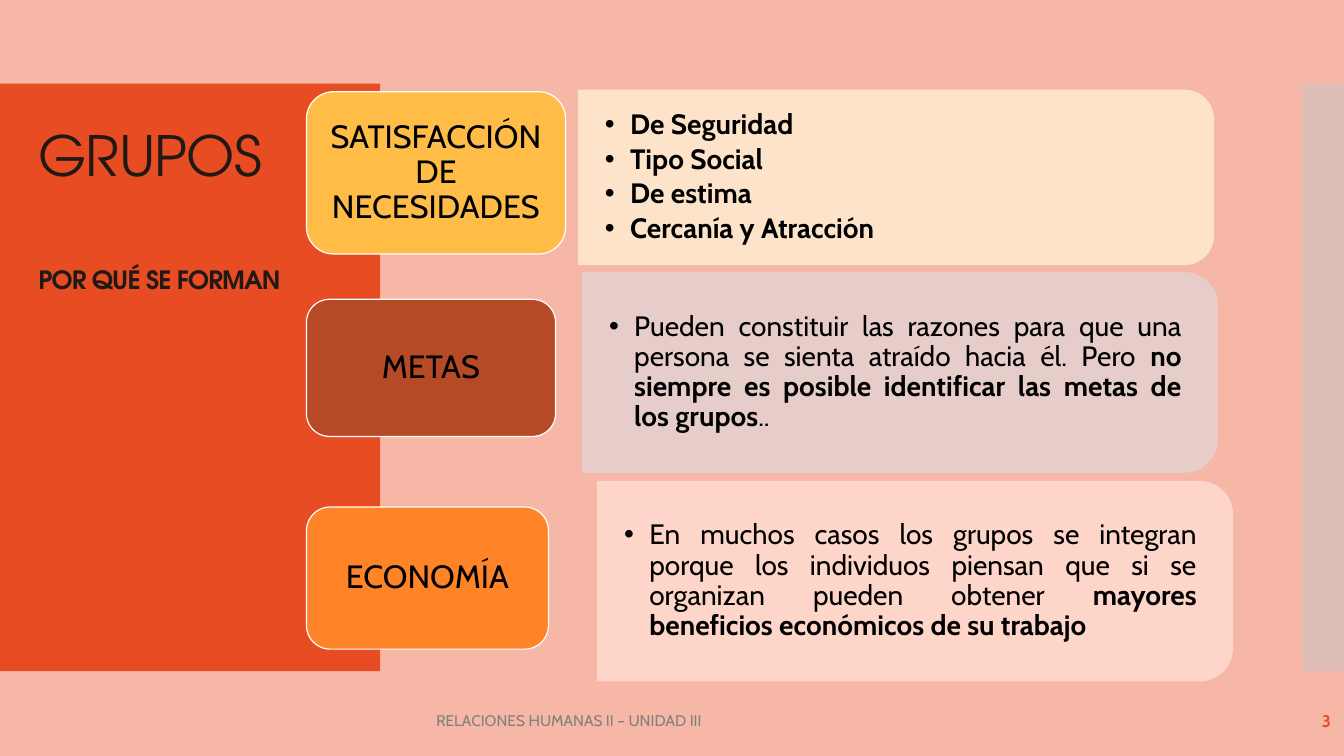
from lxml import etree
from pptx import Presentation
from pptx.dml.color import RGBColor
from pptx.enum.shapes import MSO_SHAPE
from pptx.enum.text import MSO_ANCHOR, MSO_AUTO_SIZE, PP_ALIGN
from pptx.oxml.ns import qn
from pptx.util import Inches, Pt

RECT = MSO_SHAPE.RECTANGLE
ROUNDED = MSO_SHAPE.ROUNDED_RECTANGLE
ROUND_TOP = MSO_SHAPE.ROUND_2_SAME_RECTANGLE
TOP, MIDDLE = MSO_ANCHOR.TOP, MSO_ANCHOR.MIDDLE
LEFT, CENTER, RIGHT, JUSTIFY = PP_ALIGN.LEFT, PP_ALIGN.CENTER, PP_ALIGN.RIGHT, PP_ALIGN.JUSTIFY
BODY_FONT, TITLE_FONT = "Cabin", "TeX Gyre Adventor"
COLORS = {
    "background": "F6B7A7", "accent": "E84C22", "side": "C8C8C8",
    "title": "211915", "footer": "808080", "black": "000000", "white": "FFFFFF",
}
PANEL_WIDTH, LIST_WIDTH, LABEL_LEFT = 6.31, 6.22, 3.04

# Label, its colour, top, width and height; panel colour, left, top and height;
# list items, each made of (text, bold) pieces
REASONS = [
    ("SATISFACCIÓN DE NECESIDADES", "FFBD47", (0.91, 2.57, 1.61),
     "FFE8CF", (5.73, 0.89, 1.74),
     [[("De Seguridad", True)], [("Tipo Social", True)],
      [("De estima", True)], [("Cercanía y Atracción", True)]]),
    ("METAS", "B64926", (2.97, 2.47, 1.36),
     "E5D0CD", (5.77, 2.7, 1.99),
     [[("Pueden constituir las razones para que una persona se sienta atraído hacia él. Pero ", False),
       ("no siempre es posible identificar las metas de los grupos", True), ("..", False)]]),
    ("ECONOMÍA", "FF8427", (5.03, 2.4, 1.41),
     "FFD9CD", (5.92, 4.77, 1.99),
     [[("En muchos casos los grupos se integran porque los individuos piensan que si se "
        "organizan pueden obtener ", False),
       ("mayores beneficios económicos de su trabajo", True)]]),
]


def add_block(kind, left, top, width, height, color, opacity=100, outline=None):
    """Add a filled shape; opacity is a percentage."""
    block = slide.shapes.add_shape(kind, Inches(left), Inches(top), Inches(width), Inches(height))
    block.shadow.inherit = False
    block.fill.solid()
    block.fill.fore_color.rgb = RGBColor.from_string(color)
    if opacity < 100:
        tint = block.fill._xPr.find(qn("a:solidFill"))[0]
        etree.SubElement(tint, qn("a:alpha")).set("val", str(opacity * 1000))
    if outline:
        block.line.color.rgb = RGBColor.from_string(outline)
        block.line.width = Pt(0.85)
    else:
        block.line.fill.background()
    return block


def write(frame, paragraphs, size, color, font=BODY_FONT, align=LEFT, anchor=MIDDLE, spacing=0.9):
    """Fill a text frame with paragraphs, each a list of (text, bold) pieces."""
    frame.word_wrap = True
    frame.auto_size = MSO_AUTO_SIZE.NONE
    frame.vertical_anchor = anchor
    for index, pieces in enumerate(paragraphs):
        paragraph = frame.add_paragraph() if index else frame.paragraphs[0]
        layout = {"alignment": align, "line_spacing": spacing, "space_before": Pt(0)}
        for name, value in layout.items():
            setattr(paragraph, name, value)
        for text, bold in pieces:
            run = paragraph.add_run()
            run.text = text
            for name, value in {"name": font, "size": Pt(size), "bold": bold}.items():
                setattr(run.font, name, value)
            run.font.color.rgb = RGBColor.from_string(color)


prs = Presentation()
prs.slide_width, prs.slide_height = Inches(13.33), Inches(7.5)
slide = prs.slides.add_slide(prs.slide_layouts.get_by_name("Comparison"))
slide.background.fill.solid()
slide.background.fill.fore_color.rgb = RGBColor.from_string(COLORS["background"])
title, *reason_lists, spare = slide.placeholders
spare.element.getparent().remove(spare.element)
layers = slide.shapes._spTree

# Side bars and title
add_block(RECT, 0, 0.83, 3.77, 5.83, COLORS["accent"])
add_block(RECT, 12.92, 0.83, 0.41, 5.83, COLORS["side"], opacity=50)
layers.append(title.element)
title.left, title.top, title.width, title.height = map(Inches, (0.28, 1.23, 3.22, 1.57))
write(title.text_frame, [[("GRUPOS", False)], [("POR QUÉ SE FORMAN", True)]],
      39.6, COLORS["title"], TITLE_FONT, anchor=TOP)
heading, subtitle = title.text_frame.paragraphs
subtitle.space_before = Pt(56)
subtitle.runs[0].font.size = Pt(18)
for line in (heading, subtitle):
    line.runs[0].font._element.set("spc", "-60")

# One panel, list and label for each reason
for reason_list, reason in zip(reason_lists, REASONS):
    label, label_color, (label_top, label_width, label_height), panel_color, place, items = reason
    left, top, height = place
    # The panel is a standing shape turned a quarter about its centre
    shift = (PANEL_WIDTH - height) / 2
    panel = add_block(ROUND_TOP, left + shift, top - shift, height, PANEL_WIDTH, panel_color, opacity=90)
    panel.rotation = 90

    layers.append(reason_list.element)
    box = (left, top, LIST_WIDTH, height)
    reason_list.left, reason_list.top, reason_list.width, reason_list.height = map(Inches, box)
    frame = reason_list.text_frame
    margins = {"margin_left": 0.27, "margin_right": 0.27, "margin_top": 0.14, "margin_bottom": 0.14}
    for name, value in margins.items():
        setattr(frame, name, Inches(value))
    write(frame, items, 20, COLORS["black"], align=JUSTIFY)
    for item in frame.paragraphs:
        item.space_after = Pt(3)
        properties = item._p.get_or_add_pPr()
        properties.set("marL", str(Inches(0.25)))
        properties.set("indent", str(-Inches(0.25)))
        etree.SubElement(properties, qn("a:buFont")).set("typeface", "Arial")
        etree.SubElement(properties, qn("a:buChar")).set("char", "•")

    tag = add_block(ROUNDED, LABEL_LEFT, label_top, label_width, label_height,
                    label_color, outline=COLORS["white"])
    write(tag.text_frame, [[(label, False)]], 23, COLORS["black"], align=CENTER)

# Footer and page number
for text, left, width, size, color, align, bold in [
    ("RELACIONES HUMANAS II – UNIDAD III", 4.23, 6.46, 11, "footer", LEFT, False),
    ("3", 11.63, 1.67, 12, "accent", RIGHT, True),
]:
    note = slide.shapes.add_textbox(Inches(left), Inches(6.95), Inches(width), Inches(0.4))
    write(note.text_frame, [[(text, bold)]], size, COLORS[color], align=align, spacing=1.0)

prs.save("out.pptx")
